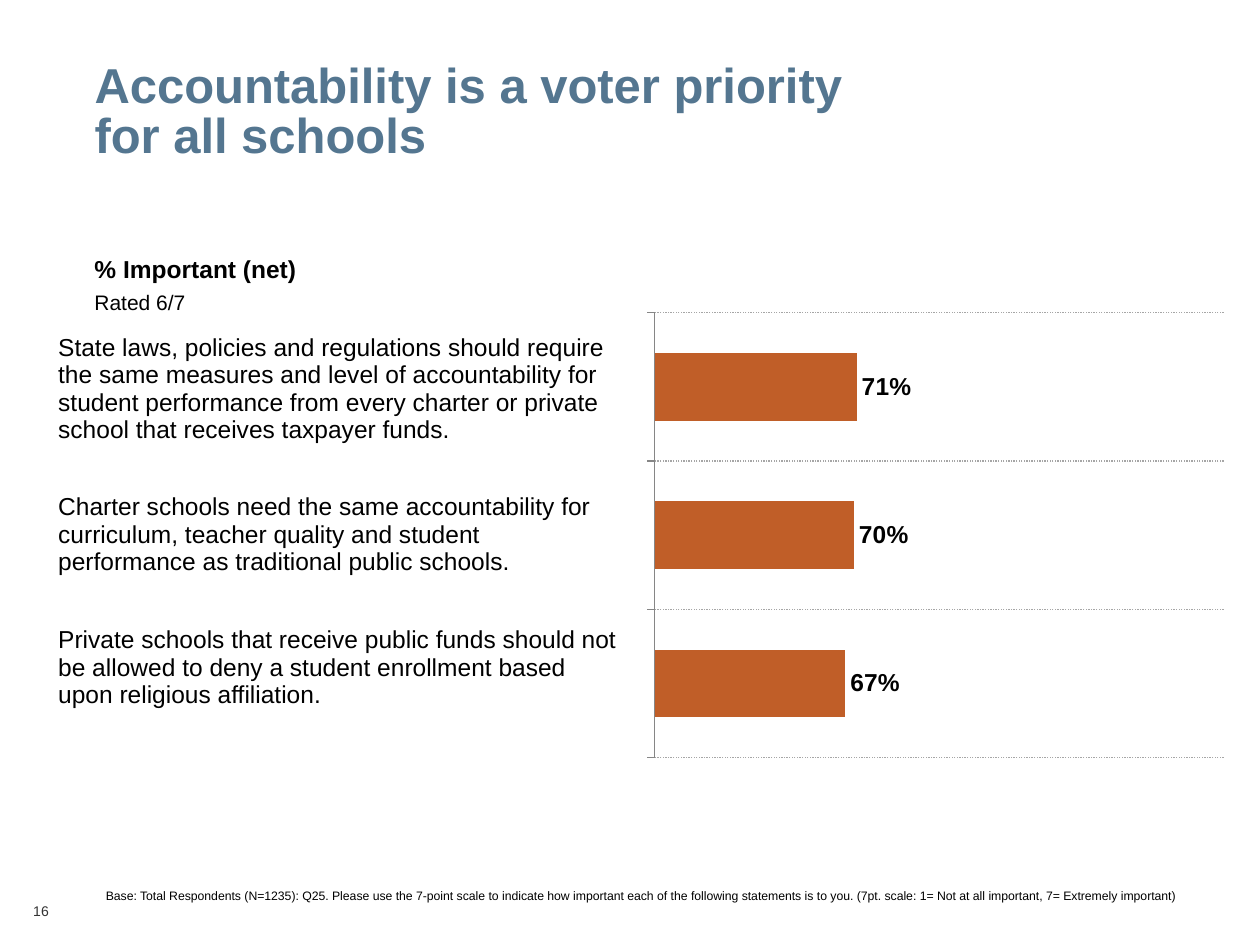
from lxml import etree
from pptx import Presentation
from pptx.chart.data import CategoryChartData
from pptx.dml.color import RGBColor
from pptx.enum.chart import XL_CHART_TYPE as Kind, XL_LABEL_POSITION as Spot
from pptx.enum.chart import XL_TICK_LABEL_POSITION as Labels, XL_TICK_MARK as Tick
from pptx.enum.dml import MSO_LINE as Dash
from pptx.enum.text import MSO_ANCHOR as Anchor, PP_ALIGN as Align
from pptx.oxml.ns import qn
from pptx.util import Pt

BLACK = RGBColor(0x00, 0x00, 0x00)
DARK = RGBColor(0x33, 0x33, 0x33)
BLUE = RGBColor(0x54, 0x76, 0x90)
ORANGE = RGBColor(0xC0, 0x5E, 0x28)
GRID = RGBColor(0xA6, 0xA6, 0xA6)
AXIS = RGBColor(0x86, 0x86, 0x86)

FONT = "Arial"
ITEMS = [
    ("State laws, policies and regulations should require the same measures "
     "and level of accountability for student performance from every charter "
     "or private school that receives taxpayer funds.", 0.71, 81.5),
    ("Charter schools need the same accountability for curriculum, teacher "
     "quality and student performance as traditional public schools.", 0.70, 85),
    ("Private schools that receive public funds should not be allowed to deny "
     "a student enrollment based upon religious affiliation.", 0.67, 67),
]
BASE = ("Base: Total Respondents (N=1235): Q25. Please use the 7-point scale to "
        "indicate how important each of the following statements is to you. "
        "(7pt. scale: 1= Not at all important, 7= Extremely important)")


def style(font, size, color=BLACK, bold=False, name=FONT):
    font.name, font.size, font.bold = name, Pt(size), bold
    font.color.rgb = color


def clear(frame, wrap=True):
    frame.margin_left = frame.margin_right = 0
    frame.margin_top = frame.margin_bottom = 0
    frame.word_wrap = wrap


def add_title(slide, box):
    title = slide.shapes.title
    title.left, title.top, title.width, title.height = map(Pt, box)
    frame = title.text_frame
    frame.text = "Accountability is a voter priority for all schools"
    clear(frame)
    frame.vertical_anchor = Anchor.MIDDLE
    line = frame.paragraphs[0]
    line.alignment, line.line_spacing = Align.LEFT, 0.85
    style(line.runs[0].font, 28, BLUE, True)


def add_text(slide, box, lines, wrap=True, space=None):
    """Each line is its text, size, colour and boldness."""
    frame = slide.shapes.add_textbox(*map(Pt, box)).text_frame
    clear(frame, wrap)
    frame.text = "\n".join(line[0] for line in lines)
    for para, (_, size, color, bold) in zip(frame.paragraphs, lines):
        if space:
            para.line_spacing = Pt(space)
        style(para.runs[0].font, size, color, bold)


def add_table(slide, box):
    table = slide.shapes.add_table(len(ITEMS), 1, *map(Pt, box)).table
    table.first_row = table.horz_banding = False
    for row, (text, _, height) in zip(table.rows, ITEMS):
        row.height = Pt(height)
        cell = row.cells[0]
        cell.fill.background()
        cell.vertical_anchor = Anchor.MIDDLE
        cell.margin_left = cell.margin_right = Pt(0.75)
        cell.margin_top = cell.margin_bottom = 0
        cell.text = text
        style(cell.text_frame.paragraphs[0].runs[0].font, 14)


def set_plot(chart, x, y, w, h):
    """Fix the inner plot area, in fractions of the chart."""
    area = chart.element.find(".//" + qn("c:plotArea"))
    for old in area.findall(qn("c:layout")):
        area.remove(old)
    layout = etree.Element(qn("c:layout"))
    area.insert(0, layout)
    manual = etree.SubElement(layout, qn("c:manualLayout"))
    parts = [("layoutTarget", "inner"), ("xMode", "edge"), ("yMode", "edge"),
             ("x", x), ("y", y), ("w", w), ("h", h)]
    for tag, value in parts:
        etree.SubElement(manual, qn("c:" + tag)).set("val", str(value))


def add_chart(slide, box):
    data = CategoryChartData(number_format="0%")
    data.categories = [str(n + 1) for n in range(len(ITEMS))]
    data.add_series("Series 1", [item[1] for item in ITEMS])
    chart = slide.shapes.add_chart(Kind.BAR_CLUSTERED, *map(Pt, box), data).chart
    chart.has_legend = chart.has_title = False
    style(chart.font, 9, name="League Spartan")
    set_plot(chart, 0.05, 0.102, 0.921, 0.859)

    # Axes
    cats, vals = chart.category_axis, chart.value_axis
    cats.reverse_order = True
    cats.tick_label_position = Labels.NONE
    cats.major_tick_mark, cats.minor_tick_mark = Tick.OUTSIDE, Tick.NONE
    cats.format.line.color.rgb = AXIS
    cats.has_major_gridlines = True
    grid = cats.major_gridlines.format.line
    grid.color.rgb, grid.width = GRID, Pt(0.75)
    grid.dash_style = Dash.ROUND_DOT
    vals.has_major_gridlines = vals.visible = False
    vals.minimum_scale, vals.maximum_scale, vals.major_unit = 0, 2, 0.2

    # Bars and their labels
    plot = chart.plots[0]
    plot.gap_width, plot.vary_by_categories = 120, False
    bars = plot.series[0]
    bars.format.fill.solid()
    bars.format.fill.fore_color.rgb = ORANGE
    labels = bars.data_labels
    labels.show_value = True
    labels.position = Spot.OUTSIDE_END
    labels.number_format, labels.number_format_is_linked = "0%", False
    style(labels.font, 14, bold=True)


def main():
    deck = Presentation()
    deck.slide_width, deck.slide_height = Pt(720), Pt(540)
    slide = deck.slides.add_slide(deck.slide_layouts[5])
    # Page number
    add_text(slide, (19, 516, 126, 9.5), [("16", 8, DARK, False)])
    add_chart(slide, (356.5, 148.5, 353, 296))
    add_table(slide, (32.5, 181.5, 324, 233.5))
    add_title(slide, (54, 0, 468, 129.5))
    # Base note and chart heading
    add_text(slide, (60.5, 507.5, 630, 8.5), [(BASE, 7, BLACK, False)])
    heading = [("% Important (net)", 14, BLACK, True),
               ("Rated 6/7", 12, BLACK, False)]
    add_text(slide, (54, 144, 116, 35.5), heading, wrap=False, space=17.8)
    deck.save("out.pptx")


if __name__ == "__main__":
    main()
